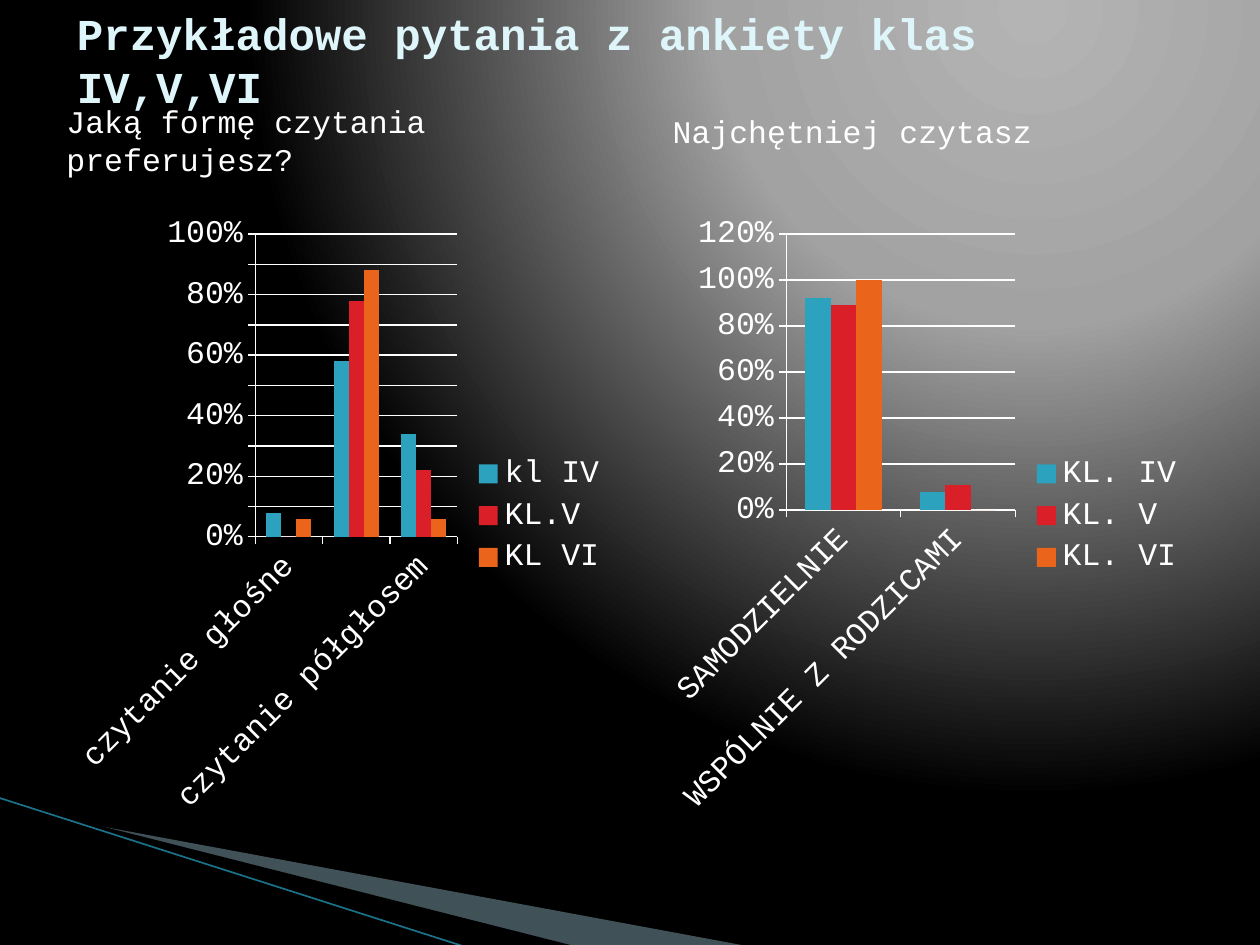
from lxml.etree import SubElement
from pptx import Presentation
from pptx.chart.data import CategoryChartData
from pptx.dml.color import RGBColor as RGB
from pptx.enum.chart import XL_CHART_TYPE as ChartType, XL_LEGEND_POSITION as LegendPos
from pptx.enum.chart import XL_TICK_MARK as Tick
from pptx.enum.shapes import MSO_CONNECTOR as Connector
from pptx.enum.text import MSO_ANCHOR as Anchor, MSO_AUTO_SIZE as AutoSize
from pptx.oxml import parse_xml
from pptx.oxml.ns import nsdecls, qn
from pptx.util import Cm, Pt

FONT = "Courier New"
COLORS = {
    "title": "DEF5FA", "text": "FFFFFF", "wedge": "A0CBDC", "shadow": "000000",
    "line": "1A7389", "series": ["2DA2BF", "DA1F28", "EB641B"],
}
BACKGROUND = [(0, "B4B4B4"), (40, "A2A2A2"), (100, "000000")]
WEDGES = [
    ("wedge", 40, [(1.4, 16.54), (15.11, 19.08), (11.58, 19.08), (1.4, 16.51)]),
    ("shadow", 100, [(1.35, 16.48), (11.61, 19.08), (9.45, 19.1), (1.37, 16.51)]),
]
TITLE = "Przykładowe pytania z ankiety klas IV,V,VI"
QUESTIONS = [
    ("Jaką formę czytania preferujesz?", (1.09, 1.93, 10, 1.02)),
    ("Najchętniej czytasz", (13.31, 2.13, 8.79, 1.02)),
]
CHARTS = [
    {
        "cats": ["czytanie głośne", "czytanie cisze", "czytanie półgłosem"],
        "series": [("kl IV", (0.08, 0.58, 0.34)), ("KL.V", (0, 0.78, 0.22)),
                   ("KL VI", (0.06, 0.88, 0.06))],
        "max": 1, "step": 0.1,
    },
    {
        "cats": ["SAMODZIELNIE", "WSPÓLNIE Z RODZICAMI"],
        "series": [("KL. IV", (0.92, 0.08)), ("KL. V", (0.89, 0.11)), ("KL. VI", (1, 0))],
        "max": 1.2, "step": 0.2,
    },
]
CHART_LEFT, CHART_TOP, CHART_W, CHART_H, CHART_GAP = 1.27, 4.11, 11.23, 12.57, 0.4


def rgb(name):
    return RGB.from_string(COLORS[name])


def add_background(s):
    stops = "".join(
        f'<a:gs pos="{pos * 1000}"><a:srgbClr val="{color}"/></a:gs>' for pos, color in BACKGROUND
    )
    s.element.cSld.insert(0, parse_xml(
        f'<p:bg {nsdecls("p", "a")}><p:bgPr><a:gradFill rotWithShape="1"><a:gsLst>{stops}</a:gsLst>'
        '<a:path path="circle"><a:fillToRect l="65000" t="0" r="0" b="98000"/></a:path>'
        '</a:gradFill><a:effectLst/></p:bgPr></p:bg>'
    ))


def add_wedge(s, color, opacity, points):
    builder = s.shapes.build_freeform(*(Cm(v) for v in points[0]))
    builder.add_line_segments([(Cm(x), Cm(y)) for x, y in points[1:]])
    sp = builder.convert_to_shape()
    sp.shadow.inherit = False
    sp.line.fill.background()
    sp.fill.solid()
    sp.fill.fore_color.rgb = rgb(color)
    if opacity < 100:
        fill = sp.fill.fore_color._xFill.find(qn("a:srgbClr"))
        SubElement(fill, qn("a:alpha"), val=str(opacity * 1000))


def add_line(s, *ends):
    line = s.shapes.add_connector(Connector.STRAIGHT, *(Cm(v) for v in ends))
    line.line.color.rgb = rgb("line")
    line.line.width = Pt(0.95)
    SubElement(line._element.spPr, qn("a:effectLst"))


def add_text(s, text, box, size=18, color="text", bold=False, fit=AutoSize.SHAPE_TO_FIT_TEXT):
    tf = s.shapes.add_textbox(*(Cm(v) for v in box)).text_frame
    tf.word_wrap = True
    tf.auto_size = fit
    tf.vertical_anchor = Anchor.TOP
    r = tf.paragraphs[0].add_run()
    r.text = text
    r.font.name, r.font.size, r.font.bold = FONT, Pt(size), bold
    r.font.color.rgb = rgb(color)


def add_bar_chart(s, info, left):
    data = CategoryChartData(number_format="0%")
    data.categories = info["cats"]
    for name, values in info["series"]:
        data.add_series(name, values)
    chart = s.shapes.add_chart(
        ChartType.COLUMN_CLUSTERED, Cm(left), Cm(CHART_TOP), Cm(CHART_W), Cm(CHART_H), data
    ).chart
    chart.has_title = False
    chart.font.name, chart.font.size = FONT, Pt(18)
    chart.font.color.rgb = rgb("text")
    chart.has_legend = True
    chart.legend.position = LegendPos.RIGHT
    chart.legend.include_in_layout = False

    plot = chart.plots[0]
    plot.vary_by_categories = False
    plot.gap_width, plot.overlap = 150, 0
    for series, color in zip(plot.series, COLORS["series"]):
        series.format.fill.solid()
        series.format.fill.fore_color.rgb = RGB.from_string(color)

    values = chart.value_axis
    values.minimum_scale, values.maximum_scale = 0, info["max"]
    values.major_unit = info["step"]
    values.has_major_gridlines = True
    values.tick_labels.number_format = "0%"
    values.tick_labels.number_format_is_linked = False
    for axis in (values, chart.category_axis):
        axis.major_tick_mark = Tick.OUTSIDE
        axis.minor_tick_mark = Tick.NONE
    for part in (values, chart.category_axis, values.major_gridlines):
        part.format.line.color.rgb = rgb("text")
        part.format.line.width = Pt(0.75)


def main():
    prs = Presentation()
    prs.slide_width, prs.slide_height = Cm(25.4), Cm(19.05)
    s = prs.slides.add_slide(prs.slide_layouts[6])
    add_background(s)
    for wedge in WEDGES:
        add_wedge(s, *wedge)
    add_line(s, -0.03, 16.08, 9.42, 19.1)
    for i, info in enumerate(CHARTS):
        add_bar_chart(s, info, CHART_LEFT + i * (CHART_W + CHART_GAP))
    add_text(s, TITLE, (1.3, 0, 22, 2.3), size=25.2, color="title", bold=True, fit=AutoSize.NONE)
    for text, box in QUESTIONS:
        add_text(s, text, box)
    prs.save("out.pptx")


if __name__ == "__main__":
    main()
